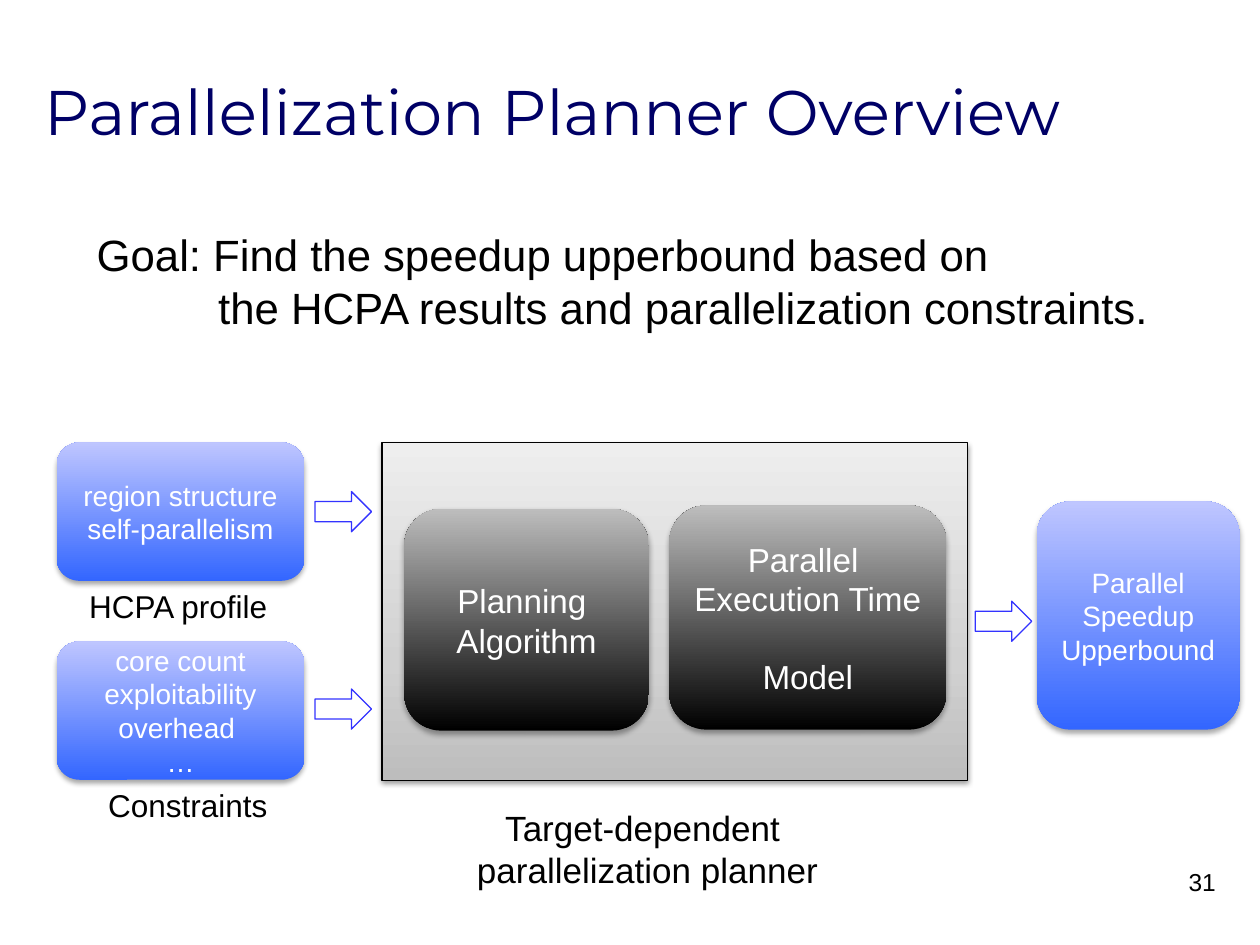
from lxml.etree import SubElement
from pptx import Presentation
from pptx.dml.color import RGBColor
from pptx.enum.shapes import MSO_SHAPE
from pptx.enum.text import MSO_ANCHOR, PP_ALIGN
from pptx.oxml.ns import qn
from pptx.util import Cm, Pt


def write_text(shape, lines, size, color, align, font="Arial", anchor=MSO_ANCHOR.TOP):
    shape.text_frame.vertical_anchor = anchor
    paragraph = shape.text_frame.paragraphs[0]
    paragraph.alignment = align
    for index, line in enumerate(lines):
        if index:
            paragraph.add_line_break()
        run = paragraph.add_run()
        run.text = line
        run.font.size = Pt(size)
        run.font.name = font
        run.font.color.rgb = RGBColor.from_string(color)
    return paragraph


def add_panel(preset, box, stops, opacity, distance):
    shape = slide.shapes.add_shape(preset, *[Cm(value) for value in box])
    shape.fill.gradient()
    shape.fill.gradient_angle = 90
    properties = shape._element.spPr
    stop_list = properties.find(".//" + qn("a:gsLst"))
    for stop in list(stop_list):
        stop_list.remove(stop)
    for position, color in stops:
        stop = SubElement(stop_list, qn("a:gs"), pos=str(position * 1000))
        SubElement(stop, qn("a:srgbClr"), val=color)
    shape.line.fill.background()
    shape.shadow.inherit = False
    effects = properties.find(qn("a:effectLst"))
    shadow = SubElement(effects, qn("a:outerShdw"), blurRad=str(Pt(3.1)),
                        dist=str(Pt(distance)), dir="5400000", rotWithShape="0")
    shadow_color = SubElement(shadow, qn("a:srgbClr"), val="000000")
    SubElement(shadow_color, qn("a:alpha"), val=str(opacity * 1000))
    return shape


presentation = Presentation()
presentation.slide_width = Cm(25.4)
presentation.slide_height = Cm(19.05)
slide = presentation.slides.add_slide(presentation.slide_layouts[6])

frame = add_panel(MSO_SHAPE.RECTANGLE, (7.7, 8.92, 11.81, 6.81),
                  [(0, "BDBDBD"), (35, "D1D1D1"), (100, "EEEEEE")], 38, 1.6)
frame.line.color.rgb = RGBColor.from_string("000000")
frame.line.width = Pt(0.75)

blue = [(0, "3366FF"), (100, "BFC6FF")]
black = [(0, "000000"), (100, "BDBDBD")]
for box, stops, size, lines in [
    ((1.14, 8.92, 5, 2.79), blue, 16, ["region structure", "self-parallelism"]),
    ((1.14, 12.93, 5, 2.79), blue, 16, ["core count", "exploitability", "overhead ", "…"]),
    ((8.15, 10.26, 4.93, 4.47), black, 19, ["Planning ", "Algorithm"]),
    ((13.49, 10.19, 5.59, 4.52), black, 19, ["Parallel ", "Execution Time ", "Model"]),
    ((20.9, 10.11, 4.09, 4.6), blue, 16, ["Parallel", "Speedup", "Upperbound"]),
]:
    block = add_panel(MSO_SHAPE.ROUNDED_RECTANGLE, box, stops, 35, 1.8)
    write_text(block, lines, size, "FFFFFF", PP_ALIGN.CENTER, anchor=MSO_ANCHOR.MIDDLE)

for left, top in [(6.35, 9.91), (6.35, 13.89), (19.66, 12.12)]:
    arrow = slide.shapes.add_shape(MSO_SHAPE.RIGHT_ARROW, Cm(left), Cm(top), Cm(1.14), Cm(0.81))
    arrow.fill.background()
    arrow.line.color.rgb = RGBColor.from_string("3333FF")
    arrow.line.width = Pt(0.75)
    arrow.shadow.inherit = False

title = slide.shapes.add_textbox(Cm(0.64), Cm(0.64), Cm(24.21), Cm(3.18))
title.text_frame.word_wrap = True
write_text(title, ["Parallelization Planner Overview"], 36, "000066", PP_ALIGN.LEFT,
           "Montserrat", MSO_ANCHOR.MIDDLE)

goal = slide.shapes.add_textbox(Cm(1.7), Cm(4.47), Cm(22.6), Cm(2.39))
goal.text_frame.word_wrap = True
goal_paragraph = write_text(goal, ["Goal: Find the speedup upperbound based on ",
                                   "the HCPA results and parallelization constraints."],
                            25, "000000", PP_ALIGN.LEFT)
indent = Cm(2.45)
goal_properties = goal_paragraph._p.get_or_add_pPr()
goal_properties.set("marL", str(indent))
goal_properties.set("indent", str(-indent))

for box, lines, size, align in [
    ((1.55, 11.71, 4.14, 1.02), ["HCPA profile"], 18, PP_ALIGN.LEFT),
    ((1.93, 15.72, 3.76, 1.02), ["Constraints"], 18, PP_ALIGN.LEFT),
    ((9.32, 16.13, 7.47, 1.96), ["Target-dependent ", "parallelization planner"], 20, PP_ALIGN.CENTER),
    ((19.48, 17.35, 5.28, 1.27), ["31"], 14, PP_ALIGN.RIGHT),
]:
    label = slide.shapes.add_textbox(*[Cm(value) for value in box])
    label.text_frame.word_wrap = align == PP_ALIGN.RIGHT
    write_text(label, lines, size, "000000", align)

presentation.save("out.pptx")
